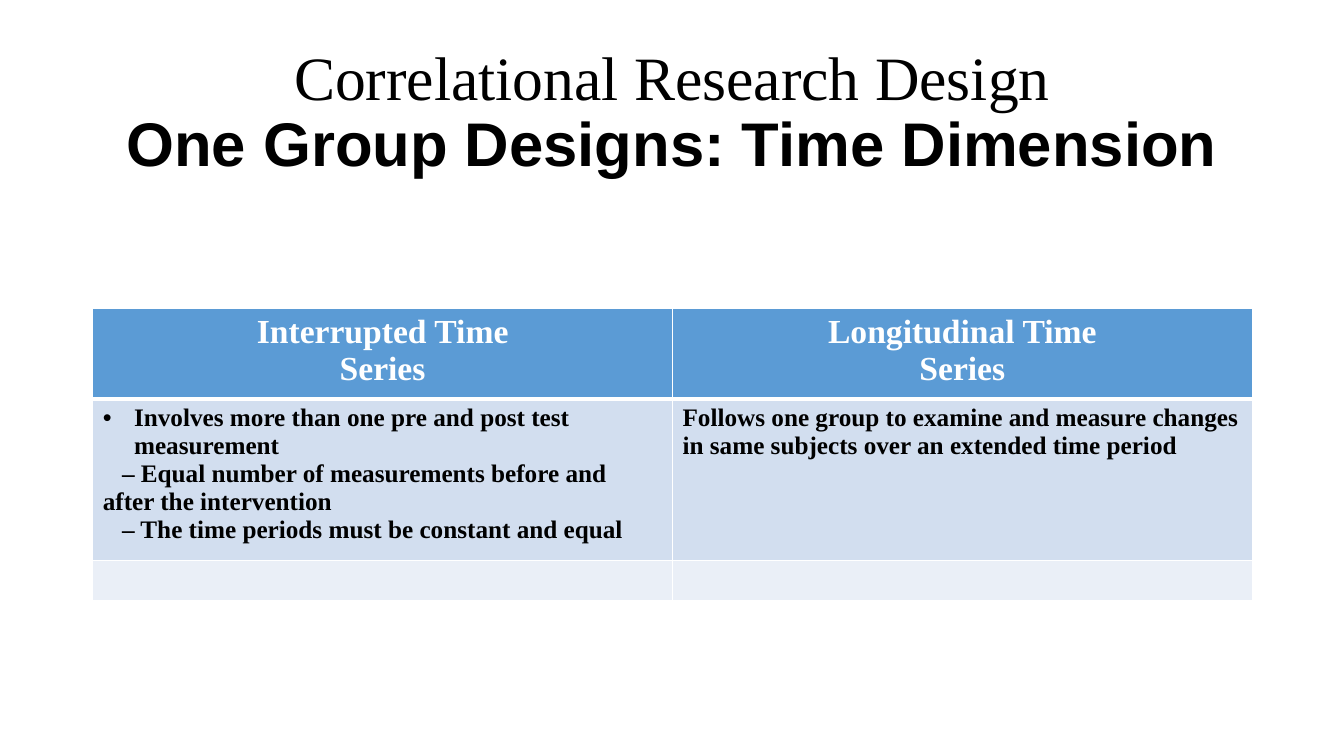
from lxml.etree import SubElement
from pptx import Presentation
from pptx.dml.color import RGBColor
from pptx.enum.text import MSO_ANCHOR, PP_ALIGN
from pptx.oxml.ns import qn
from pptx.util import Inches, Pt


def color(value):
    return RGBColor.from_string(value)


def write(paragraph, text, *, font, size, ink="000000", bold=False, align=None,
          margin=0, indent=0, bullet=None):
    properties = paragraph._p.get_or_add_pPr()
    if margin or indent:
        properties.set("marL", str(Inches(margin)))
        properties.set("indent", str(Inches(indent)))
    if bullet:
        SubElement(properties, qn("a:buFont"), typeface="Arial")
        SubElement(properties, qn("a:buChar"), char=bullet)
    if align is not None:
        paragraph.alignment = align
    run = paragraph.add_run()
    run.text = text
    run.font.name = font
    run.font.size = Pt(size)
    run.font.bold = bold
    run.font.color.rgb = color(ink)


class Deck:
    serif = "Times New Roman"
    sans = "Arial"
    border = "FFFFFF"

    def __init__(self):
        self.presentation = Presentation()
        self.presentation.slide_width = Inches(13.33)
        self.presentation.slide_height = Inches(7.5)
        self.slide = self.presentation.slides.add_slide(self.presentation.slide_layouts[6])

    def title(self, topic, subject, left, top, width, height):
        heading = self.slide.shapes.add_textbox(
            Inches(left), Inches(top), Inches(width), Inches(height))
        frame = heading.text_frame
        frame.word_wrap = True
        frame.vertical_anchor = MSO_ANCHOR.MIDDLE
        paragraph = frame.paragraphs[0]
        paragraph.line_spacing = 0.9
        write(paragraph, topic, font=self.serif, size=44, align=PP_ALIGN.CENTER)
        paragraph.add_line_break()
        write(paragraph, subject, font=self.sans, size=44, bold=True)

    def outline(self, cell, top, bottom):
        properties = cell._tc.get_or_add_tcPr()
        for side, width in (("L", 1), ("R", 1), ("T", top), ("B", bottom)):
            edge = SubElement(properties, qn(f"a:ln{side}"), w=str(Pt(width)))
            fill = SubElement(edge, qn("a:solidFill"))
            SubElement(fill, qn("a:srgbClr"), val=self.border)

    def table(self, rows, heights, fills, left, top, width):
        columns = len(rows[0])
        grid = self.slide.shapes.add_table(
            len(rows), columns, Inches(left), Inches(top),
            Inches(width), Inches(sum(heights))).table
        for column in grid.columns:
            column.width = Inches(width / columns)
        for r, (row, height, fill) in enumerate(zip(rows, heights, fills)):
            grid.rows[r].height = Inches(height)
            for c, lines in enumerate(row):
                cell = grid.cell(r, c)
                self.outline(cell, top=3 if r == 1 else 1, bottom=3 if r == 0 else 1)
                cell.fill.solid()
                cell.fill.fore_color.rgb = color(fill)
                self.fill_cell(cell.text_frame, lines, header=r == 0)

    def fill_cell(self, frame, lines, header):
        if header:
            style = dict(size=24, ink="FFFFFF", align=PP_ALIGN.CENTER)
        else:
            style = dict(size=18)
        for i, (text, layout) in enumerate(lines):
            paragraph = frame.add_paragraph() if i else frame.paragraphs[0]
            write(paragraph, text, font=self.serif, bold=True, **style, **layout)

    def save(self):
        self.presentation.save("out.pptx")


def main():
    plain = {}
    bulleted = dict(margin=0.31, indent=-0.31, bullet="•")
    dashed = dict(indent=0.19)
    designs = [
        [
            [("Interrupted Time", plain), ("Series", plain)],
            [("Longitudinal Time", plain), ("Series", plain)],
        ],
        [
            [
                ("Involves more than one pre and post test measurement", bulleted),
                ("– Equal number of measurements before and after the intervention", dashed),
                ("– The time periods must be constant and equal", dashed),
            ],
            [("Follows one group to examine and measure changes in same subjects "
              "over an extended time period", plain)],
        ],
        [[], []],
    ]
    deck = Deck()
    deck.title("Correlational Research Design", "One Group Designs: Time Dimension",
               0.92, 0.4, 11.5, 1.45)
    deck.table(designs, heights=[0.83, 1.49, 0.4], fills=["5B9BD5", "D2DEEF", "EAEFF7"],
               left=0.92, top=3.06, width=11.5)
    deck.save()


if __name__ == "__main__":
    main()
